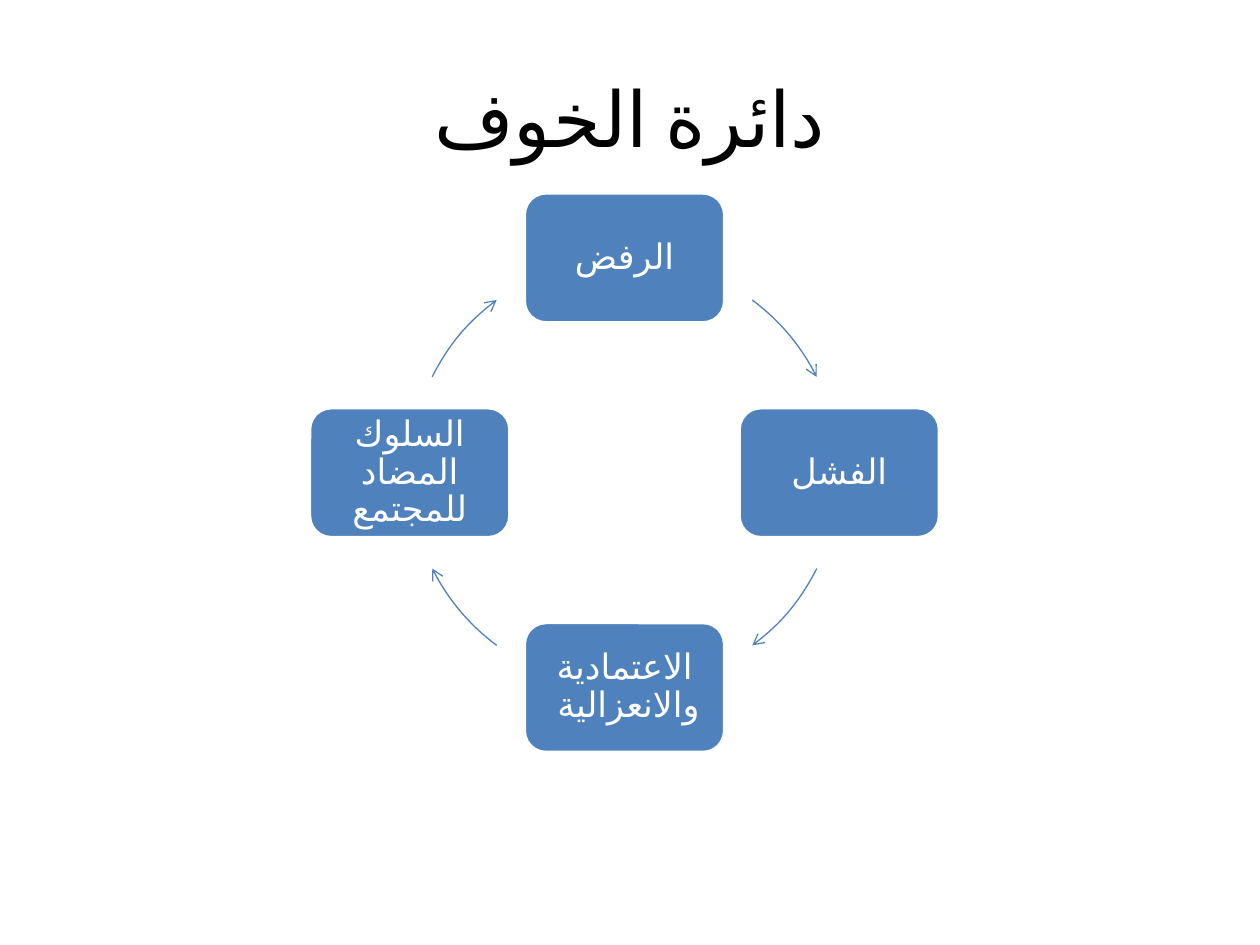
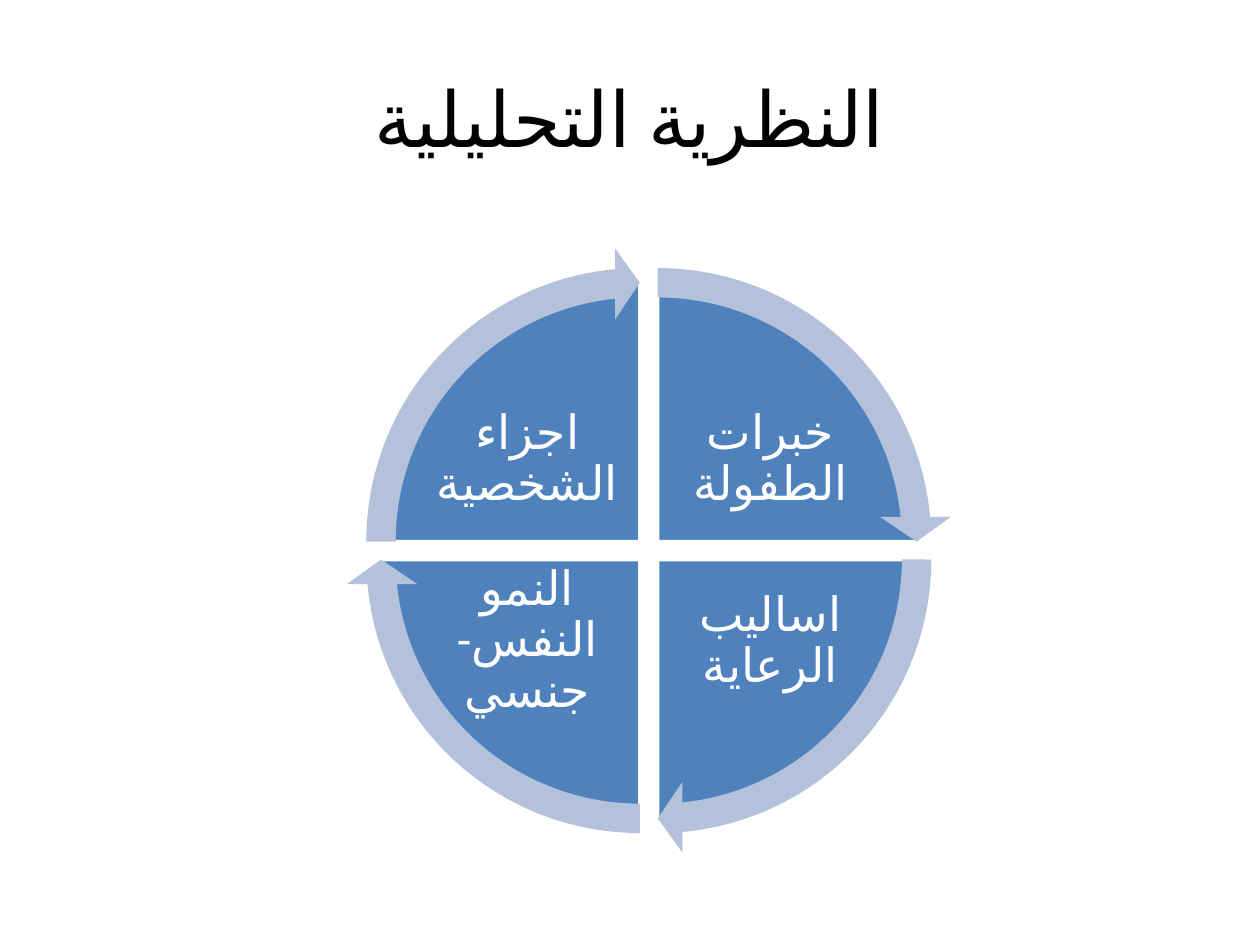
from math import cos, radians, sin

from lxml import etree
from pptx import Presentation
from pptx.dml.color import RGBColor
from pptx.enum.shapes import MSO_SHAPE
from pptx.enum.text import MSO_ANCHOR, PP_ALIGN
from pptx.oxml.ns import qn
from pptx.util import Cm, Pt

ROUNDED, ARC = MSO_SHAPE.ROUNDED_RECTANGLE, MSO_SHAPE.ARC
PIE, CIRCULAR_ARROW = MSO_SHAPE.PIE, MSO_SHAPE.CIRCULAR_ARROW
CENTER, MIDDLE = PP_ALIGN.CENTER, MSO_ANCHOR.MIDDLE

BLACK = RGBColor(0x00, 0x00, 0x00)
WHITE = RGBColor(0xFF, 0xFF, 0xFF)
BLUE = RGBColor(0x4F, 0x81, 0xBD)
PALE_BLUE = RGBColor(0xB3, 0xC1, 0xDB)
FONT = "Calibri"


def write(sp, text, size=20, color=WHITE, inset=None, spacing=None, rtl=False):
    tf = sp.text_frame
    tf.word_wrap = True
    tf.vertical_anchor = MIDDLE
    if inset is not None:
        tf.margin_left = tf.margin_right = Cm(inset)
        tf.margin_top = tf.margin_bottom = Cm(inset)
    p = tf.paragraphs[0]
    p.alignment = CENTER
    if spacing:
        p.line_spacing = spacing
    if rtl:
        p._p.get_or_add_pPr().set("rtl", "1")
    r = p.add_run()
    r.text = text
    r.font.name = FONT
    r.font.size = Pt(size)
    r.font.color.rgb = color
    rPr = r._r.get_or_add_rPr()
    rPr.set("lang", "ar-SA")
    etree.SubElement(rPr, qn("a:cs"), typeface=FONT)


def add_centered(s, kind, cx, cy, w, h, fill=None, line=None, width=2, adj=()):
    sp = s.shapes.add_shape(kind, Cm(cx - w / 2), Cm(cy - h / 2), Cm(w), Cm(h))
    sp.shadow.inherit = False
    if fill is None:
        sp.fill.background()
    else:
        sp.fill.solid()
        sp.fill.fore_color.rgb = fill
    if line is None:
        sp.line.fill.background()
    else:
        sp.line.color.rgb = line
        sp.line.width = Pt(width)
    for i, value in enumerate(adj):
        sp.adjustments[i] = value
    return sp


prs = Presentation()
prs.slide_width, prs.slide_height = Cm(25.4), Cm(19.05)

slides = []
for title in ["دائرة الخوف", "النظرية التحليلية"]:
    s = prs.slides.add_slide(prs.slide_layouts[5])
    sp = s.shapes.title
    sp.left, sp.top, sp.width, sp.height = Cm(1.27), Cm(0.76), Cm(22.86), Cm(3.18)
    write(sp, title, size=44, color=BLACK)
    slides.append(s)
fear_slide, theory_slide = slides

RING_X, RING_Y, RING_R = 12.59, 9.53, 4.33
DEGREE = 0.6
stages = ["الرفض", "الفشل", "الاعتمادية والانعزالية ", "السلوك المضاد للمجتمع"]
arc_middles = [320, 40, 140, 220]
for i, (stage, middle) in enumerate(zip(stages, arc_middles)):
    angle = radians(90 * i - 90)
    sp = add_centered(fear_slide, ROUNDED, RING_X + RING_R * cos(angle),
                      RING_Y + RING_R * sin(angle), 4.04, 2.62, BLUE, WHITE)
    write(sp, stage, inset=0.08, spacing=0.9, rtl=True)
    sp = add_centered(fear_slide, ARC, RING_X, RING_Y, 2 * RING_R, 2 * RING_R,
                      line=BLUE, width=0.75,
                      adj=[(middle - 13.5) * DEGREE, (middle + 13.5) * DEGREE])
    etree.SubElement(sp.line._get_or_add_ln(), qn("a:tailEnd"), type="arrow")

PIE_X, PIE_Y, PIE_GAP = 13.08, 11.1, 0.18
QUARTER, FULL = 90 * DEGREE, 360 * DEGREE
quadrants = [
    ("خبرات الطفولة", 1, -1),
    ("اساليب الرعاية", 1, 1),
    ("النمو النفس- جنسي", -1, 1),
    ("اجزاء الشخصية", -1, -1),
]
starts = [(3 + i) % 4 * QUARTER for i in range(4)]
for (text, dx, dy), start in zip(quadrants, starts):
    add_centered(theory_slide, PIE, PIE_X + dx * PIE_GAP, PIE_Y + dy * PIE_GAP,
                 10.57, 10.57, BLUE, WHITE, adj=[start, (start + QUARTER) % FULL])
    w, h = 3.89, 2.9
    sp = theory_slide.shapes.add_textbox(Cm(PIE_X + dx * 2.45 - w / 2),
                                         Cm(PIE_Y + dy * 1.83 - h / 2), Cm(w), Cm(h))
    write(sp, text, size=27, inset=0.1, spacing=0.9, rtl=True)

HEAD = 3.28
for (text, dx, dy), start in zip(quadrants, starts):
    add_centered(theory_slide, CIRCULAR_ARROW, PIE_X + dx * PIE_GAP, PIE_Y + dy * PIE_GAP,
                 11.86, 11.86, PALE_BLUE,
                 adj=[0.05, HEAD, start + QUARTER - HEAD, start, 0.06])

prs.save("out.pptx")
